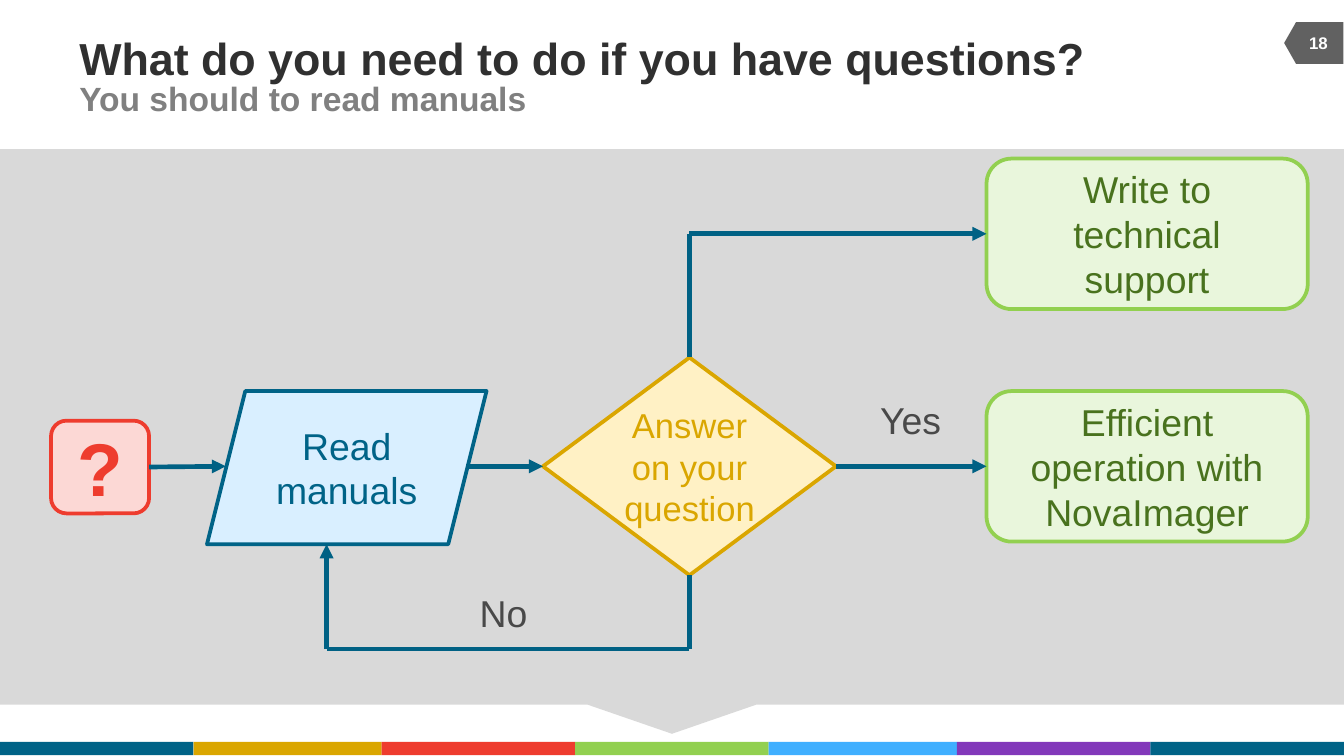
from itertools import accumulate

from lxml.etree import SubElement
from pptx import Presentation
from pptx.dml.color import RGBColor
from pptx.enum.shapes import MSO_CONNECTOR, MSO_SHAPE
from pptx.enum.text import MSO_ANCHOR, PP_ALIGN
from pptx.oxml.ns import qn
from pptx.util import Emu, Pt

EMU_PER_PX = 9144  # 100 px to the inch
WIDTH = 1000
TEAL, GOLD, RED, GREEN = "006387", "DAA600", "EE3C2E", "92D050"
BLUE, PURPLE, ARROW = "40AFFF", "8238BA", "006184"
TOP, LEFT, BOTTOM, RIGHT = range(4)


def px(*lengths):
    return [Emu(length * EMU_PER_PX) for length in lengths]


def paint(color_format, color):
    color_format.rgb = RGBColor.from_string(color)


def write(shape, text, size=20, color="494949", bold=False, align=PP_ALIGN.LEFT,
          anchor=MSO_ANCHOR.MIDDLE, insets=(10, 5), wrap=True):
    frame = shape.text_frame
    frame.word_wrap = wrap
    frame.vertical_anchor = anchor
    frame.margin_left, frame.margin_top = px(*insets)
    frame.margin_right, frame.margin_bottom = px(*insets)
    paragraph = frame.paragraphs[0]
    paragraph.alignment = align
    run = paragraph.add_run()
    run.text = text
    run.font.name = "Arial"
    run.font.size = Pt(size)
    run.font.bold = bold
    paint(run.font.color, color)


def add_text(slide, box, text, **text_format):
    write(slide.shapes.add_textbox(*px(*box)), text, **text_format)


def add_box(slide, kind, box, fill, outline=None):
    shape = slide.shapes.add_shape(kind, *px(*box))
    shape.shadow.inherit = False
    shape.fill.solid()
    paint(shape.fill.fore_color, fill)
    if outline:
        paint(shape.line.color, outline)
        shape.line.width = Pt(2)
    else:
        shape.line.fill.background()
    return shape


def add_node(slide, kind, box, text, fill, outline, **text_format):
    shape = add_box(slide, kind, box, fill, outline)
    write(shape, text, align=PP_ALIGN.CENTER, **text_format)
    return shape


def add_line(slide, start, end, begin=None, finish=None, arrow=True):
    """Draw a line; begin and finish are optional (shape, side) joints."""
    line = slide.shapes.add_connector(MSO_CONNECTOR.STRAIGHT, *px(*start, *end))
    paint(line.line.color, ARROW)
    line.line.width = Pt(2.5)
    if begin:
        line.begin_connect(*begin)
    if finish:
        line.end_connect(*finish)
    if arrow:
        SubElement(line.line._get_or_add_ln(), qn("a:tailEnd"), type="triangle")
    SubElement(line._element.spPr, qn("a:effectLst"))


def add_color_strip(slide, left, top, height):
    colors = [TEAL, GOLD, RED, GREEN, BLUE, PURPLE, TEAL]
    widths = [144, 140, 144, 144, 140, 144, 144]
    for offset, width, color in zip(accumulate(widths, initial=0), widths, colors):
        add_box(slide, MSO_SHAPE.RECTANGLE, (left + offset, top, width, height), color)


def add_page_number(slide, left, top, number):
    tag = add_box(slide, MSO_SHAPE.FLOWCHART_OFFPAGE_CONNECTOR,
                  (left + 2, top, 31, 44), "616161")
    tag.rotation = 90
    add_text(slide, (left, top + 7, 42, 30), number, size=9, color="FFFFFF",
             bold=True, align=PP_ALIGN.CENTER)


def add_heading(slide, left, top, title, subtitle):
    add_text(slide, (left, top, 800, 39), title, size=24, color="303030",
             bold=True, insets=(0, 0))
    add_text(slide, (left, top + 39, 450, 22), subtitle, size=18, color="808080",
             bold=True, insets=(0, 0))


def add_flowchart(slide, left, top, width, height):
    def at(x, y, *size):
        return (left + x, top + y, *size)

    # Panel
    panel = add_box(slide, MSO_SHAPE.DOWN_ARROW_CALLOUT, at(0, 0, width, height), "D9D9D9")
    for index, value in enumerate((0.29, 0.145, 0.05, 0.95)):
        panel.adjustments[index] = value

    # Steps, all centred on the middle row
    middle, decision_x, manuals_x = 236, 513, 243
    support_y, return_y = 63, 372
    question = add_node(slide, MSO_SHAPE.ROUNDED_RECTANGLE, at(38, middle - 34, 73, 69),
                        "?", "FCD8D5", RED, size=40, color=RED, bold=True)
    add_node(slide, MSO_SHAPE.PARALLELOGRAM, at(154, middle - 56, 208, 114),
             "Read manuals", "D9EFFF", TEAL, color=TEAL)
    decision = add_node(slide, MSO_SHAPE.DIAMOND, at(404, middle - 81, 218, 162),
                        "Answer on your question", "FFF1C5", GOLD,
                        size=18.5, color=GOLD, insets=(0, 0))
    operation, support = [
        add_node(slide, MSO_SHAPE.ROUNDED_RECTANGLE, at(734, center - 56, 239, 112),
                 text, "E9F6DC", GREEN, color="49721E", insets=(20, 12))
        for center, text in ((middle, "Efficient operation with NovaImager"),
                             (support_y, "Write to technical support"))
    ]

    # Middle row
    add_line(slide, at(111, middle), at(168, middle), begin=(question, RIGHT))
    add_line(slide, at(347, middle), at(404, middle), finish=(decision, LEFT))
    add_line(slide, at(622, middle), at(734, middle),
             begin=(decision, RIGHT), finish=(operation, LEFT))

    # Return to the manuals
    add_line(slide, at(decision_x, middle + 81), at(decision_x, return_y),
             begin=(decision, BOTTOM), arrow=False)
    add_line(slide, at(manuals_x, return_y), at(decision_x, return_y), arrow=False)
    add_line(slide, at(manuals_x, return_y), at(manuals_x, middle + 58))

    # Way to technical support
    add_line(slide, at(decision_x, support_y), at(decision_x, middle - 81),
             finish=(decision, TOP), arrow=False)
    add_line(slide, at(decision_x, support_y), at(734, support_y), finish=(support, LEFT))

    # Answers
    for box, text in ((at(645, 180, 66, 44), "Yes"), (at(347, 323, 56, 44), "No")):
        add_text(slide, box, text, anchor=MSO_ANCHOR.TOP, wrap=False)


def main():
    presentation = Presentation()
    presentation.slide_width, = px(WIDTH)
    presentation.slide_height = presentation.slide_width * 9 // 16
    slide = presentation.slides.add_slide(presentation.slide_layouts[6])
    add_color_strip(slide, 0, 552, 10)
    add_page_number(slide, 960, 10, "18")
    add_heading(slide, 59, 23, "What do you need to do if you have questions?",
                "You should to read manuals")
    add_flowchart(slide, 0, 111, WIDTH, 435)
    presentation.save("out.pptx")


if __name__ == "__main__":
    main()
